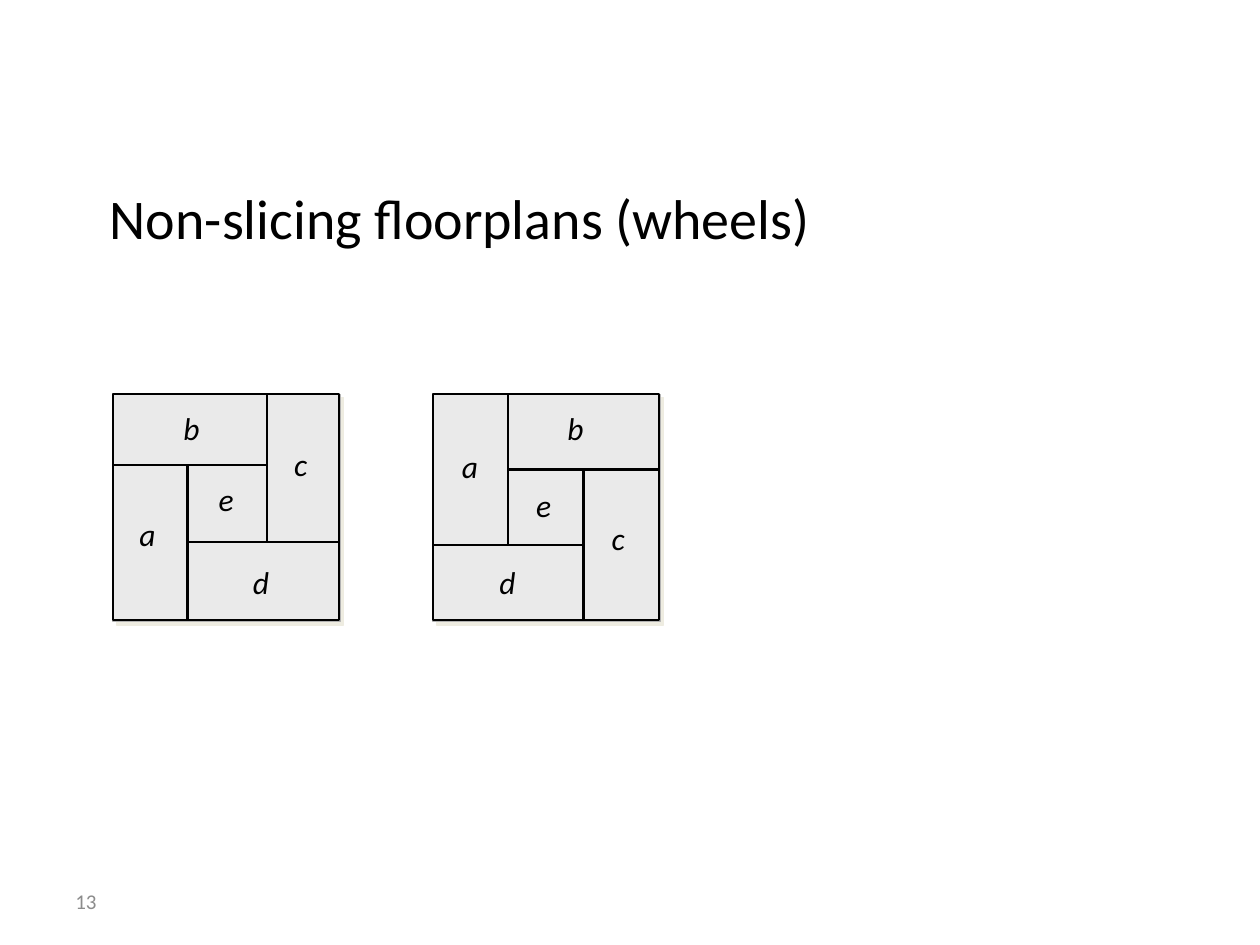
from lxml import etree
from pptx import Presentation
from pptx import util as u
from pptx.dml.color import RGBColor
from pptx.enum import shapes, text
from pptx.oxml import parse_xml
from pptx.oxml.ns import nsdecls, qn

SIDE = 4.55
TOP = 7.95
BLACK, PANEL = "000000", "EAEAEA"
SHADOW = (
    f'<a:effectLst {nsdecls("a")}><a:outerShdw dist="35560" dir="2700000" algn="ctr" '
    'rotWithShape="0"><a:srgbClr val="EEECE1"/></a:outerShdw></a:effectLst>'
)

# Cuts and label corners are in cm from the top left corner of each wheel.
# A line is (x1, y1, x2, y2), given as indexes into the cut lists.
WHEELS = [
    {
        "left": 8.73,
        "x_cuts": [0, SIDE / 3, SIDE * 2 / 3, SIDE],
        "y_cuts": [0, SIDE / 3, SIDE * 2 / 3, SIDE],
        "lines": [(0, 2, 2, 2), (2, 3, 2, 1), (1, 1, 3, 1), (1, 0, 1, 2)],
        "labels": {"b": (2.46, 0.18), "d": (1.09, 3.28), "a": (0.33, 0.94),
                   "e": (1.83, 1.73), "c": (3.35, 2.39)},
    },
    {
        "left": 2.28,
        "x_cuts": [0, 1.5, 3.1, SIDE],
        "y_cuts": [0, 1.43, 2.98, SIDE],
        "lines": [(1, 1, 1, 3), (2, 0, 2, 2), (1, 2, 3, 2), (0, 1, 2, 1)],
        "labels": {"a": (0.28, 2.31), "b": (1.17, 0.18), "c": (3.4, 0.89),
                   "d": (2.57, 3.28), "e": (1.88, 1.6)},
    },
]


def color(value):
    return RGBColor.from_string(value)


def apply(target, values):
    for name, value in values.items():
        setattr(target, name, value)


class Painter:
    font = "Calibri"
    line_width = 1.25

    def __init__(self, slide):
        self.slide = slide

    def add_words(self, frame, words, size, ink=BLACK, **font_values):
        para = frame.paragraphs[0]
        span = para.add_run()
        span.text = words
        apply(span.font, {"name": self.font, "size": u.Pt(size), **font_values})
        span.font.color.rgb = color(ink)
        return para

    def title(self, words, left, top, width, height):
        box = self.slide.shapes.title
        apply(box, {"left": u.Cm(left), "top": u.Cm(top),
                    "width": u.Cm(width), "height": u.Cm(height)})
        apply(box.text_frame, {"vertical_anchor": text.MSO_ANCHOR.TOP,
                               "auto_size": text.MSO_AUTO_SIZE.NONE})
        para = self.add_words(box.text_frame, words, 32)
        apply(para, {"alignment": text.PP_ALIGN.LEFT, "space_before": u.Pt(4)})

    def textbox(self, words, left, top, width, height, size, fill=None,
                frame_values=None, **format_values):
        box = self.slide.shapes.add_textbox(*map(u.Cm, (left, top, width, height)))
        if fill:
            box.fill.solid()
            box.fill.fore_color.rgb = color(fill)
        apply(box.text_frame, frame_values or {"word_wrap": True})
        self.add_words(box.text_frame, words, size, **format_values)

    def square(self, left, top, side, line, width, fill=None):
        box = self.slide.shapes.add_shape(
            shapes.MSO_SHAPE.RECTANGLE, *map(u.Cm, (left, top, side, side)))
        box.line.color.rgb = color(line)
        box.line.width = u.Pt(width)
        if fill:
            box.fill.solid()
            box.fill.fore_color.rgb = color(fill)
            box._element.spPr.append(parse_xml(SHADOW))
        else:
            box.fill.background()
            box.shadow.inherit = False

    def line(self, x1, y1, x2, y2):
        line = self.slide.shapes.add_connector(
            shapes.MSO_CONNECTOR.STRAIGHT, *map(u.Cm, (x1, y1, x2, y2)))
        line.line.color.rgb = color(BLACK)
        line.line.width = u.Pt(self.line_width)
        etree.SubElement(line._element.spPr, qn("a:effectLst"))

    def wheel(self, left, x_cuts, y_cuts, lines, labels):
        self.square(left, TOP, SIDE + 0.03, "B2B2B2", 0.75, PANEL)
        self.square(left, TOP, SIDE, BLACK, self.line_width)
        for x1, y1, x2, y2 in lines:
            self.line(left + x_cuts[x1], TOP + y_cuts[y1],
                      left + x_cuts[x2], TOP + y_cuts[y2])
        label_frame = {"word_wrap": False,
                       "auto_size": text.MSO_AUTO_SIZE.SHAPE_TO_FIT_TEXT}
        for name, (x, y) in labels.items():
            self.textbox(name, left + x, TOP + y, 0.86, 1.02, 18, italic=True,
                         fill=PANEL if name == "c" else None,
                         frame_values=label_frame)


def main():
    deck = Presentation()
    apply(deck, {"slide_width": u.Cm(25.4), "slide_height": u.Cm(19.05)})
    page = Painter(deck.slides.add_slide(deck.slide_layouts[5]))
    page.textbox("13", 1.27, 17.65, 5.92, 1.02, 12, ink="8C8C8C",
                 frame_values={"word_wrap": True,
                               "vertical_anchor": text.MSO_ANCHOR.MIDDLE})
    page.title("Non-slicing floorplans (wheels)", 1.96, 3.58, 22.76, 1.73)
    for wheel in WHEELS:
        page.wheel(**wheel)
    deck.save("out.pptx")


if __name__ == "__main__":
    main()
